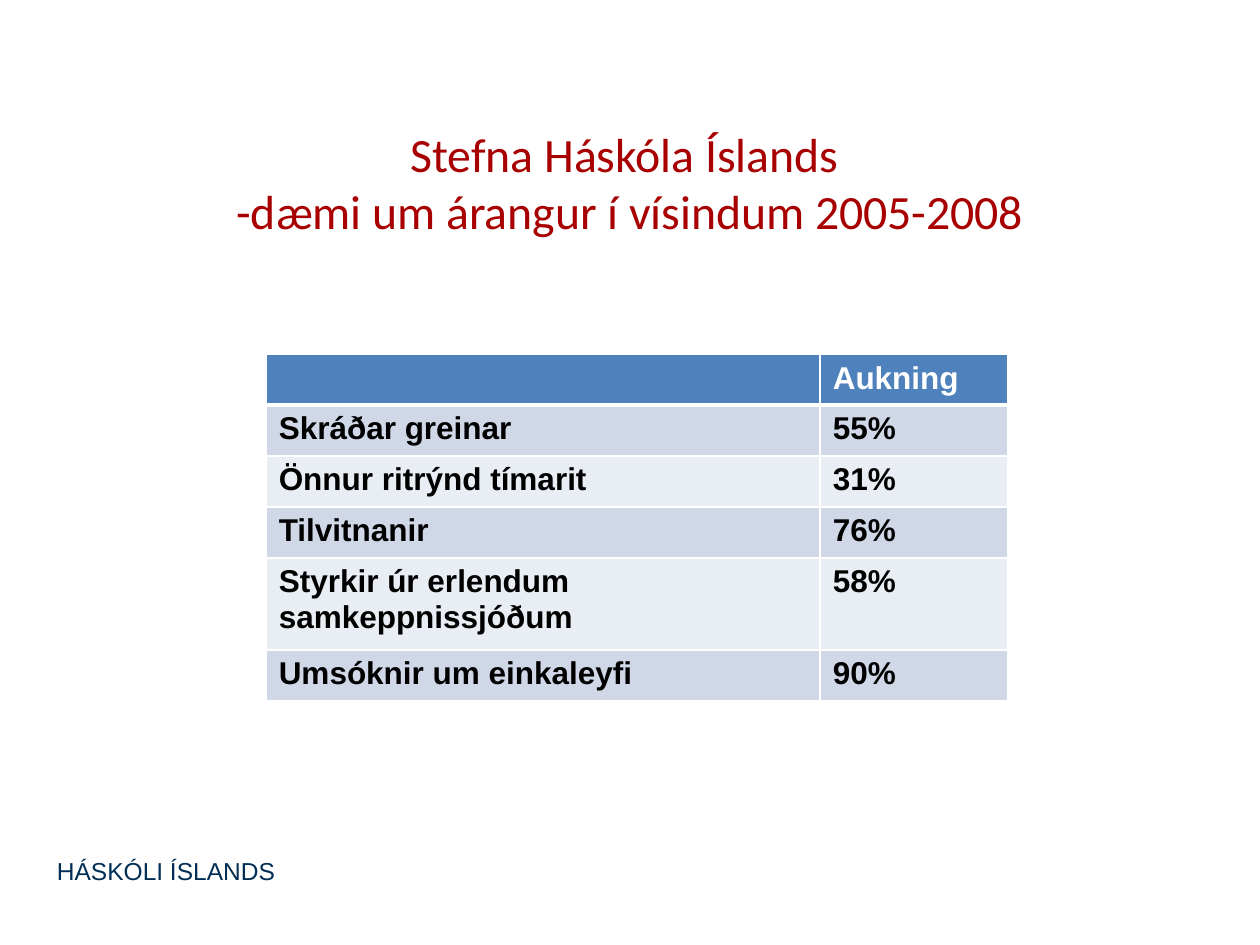
from lxml.etree import SubElement
from pptx import Presentation
from pptx.dml.color import RGBColor
from pptx.enum.text import MSO_ANCHOR, PP_ALIGN
from pptx.oxml.ns import qn
from pptx.util import Pt

WHITE = RGBColor(0xFF, 0xFF, 0xFF)
BLACK = RGBColor(0x00, 0x00, 0x00)
NAVY = RGBColor(0x00, 0x2E, 0x55)
RED = RGBColor(0xA8, 0x00, 0x00)
HEADER_BLUE = RGBColor(0x4F, 0x81, 0xBD)
BAND_DARK = RGBColor(0xD0, 0xD8, 0xE8)
BAND_LIGHT = RGBColor(0xE9, 0xED, 0xF4)


def add_span(para, text, font, size, color, bold=False):
    span = para.add_run()
    span.text = text
    span.font.name = font
    span.font.size = Pt(size)
    span.font.color.rgb = color
    span.font.bold = bold


def add_border(cell, side, width):
    line = SubElement(cell._tc.get_or_add_tcPr(), qn(f"a:{side}"), w=str(Pt(width)))
    fill = SubElement(line, qn("a:solidFill"))
    SubElement(fill, qn("a:srgbClr"), val=str(WHITE))


deck = Presentation()
deck.slide_width = Pt(720)
deck.slide_height = Pt(540)
page = deck.slides.add_slide(deck.slide_layouts[6])

footer = page.shapes.add_textbox(Pt(25.4), Pt(485.8), Pt(218), Pt(24))
footer.text_frame.word_wrap = True
add_span(footer.text_frame.paragraphs[0], "HÁSKÓLI ÍSLANDS", "Arial", 14, NAVY)

title = page.shapes.add_textbox(Pt(36), Pt(67.7), Pt(648), Pt(90))
title.text_frame.word_wrap = True
title.text_frame.vertical_anchor = MSO_ANCHOR.TOP
title.text_frame.margin_top = Pt(3.6)
para = title.text_frame.paragraphs[0]
para.alignment = PP_ALIGN.CENTER
add_span(para, "Stefna Háskóla Íslands ", "Calibri", 27.3, RED)
para.add_line_break()
add_span(para, "-dæmi um árangur í vísindum 2005-2008", "Calibri", 27.3, RED)

rows = [
    ("", "Aukning"),
    ("Skráðar greinar", "55%"),
    ("Önnur ritrýnd tímarit", "31%"),
    ("Tilvitnanir", "76%"),
    ("Styrkir úr erlendum samkeppnissjóðum", "58%"),
    ("Umsóknir um einkaleyfi", "90%"),
]
column_widths = [316.6, 107]
row_heights = [28.8, 29.2, 29.2, 29.2, 52.4, 29.2]
table = page.shapes.add_table(
    len(rows), len(column_widths), Pt(152.1), Pt(202.5),
    Pt(sum(column_widths)), Pt(sum(row_heights)),
).table
for column, width in zip(table.columns, column_widths):
    column.width = Pt(width)

for row_index, texts in enumerate(rows):
    table.rows[row_index].height = Pt(row_heights[row_index])
    is_header = row_index == 0
    band = BAND_DARK if row_index % 2 else BAND_LIGHT
    for column_index, text in enumerate(texts):
        cell = table.cell(row_index, column_index)
        add_border(cell, "lnL", 1)
        add_border(cell, "lnR", 1)
        add_border(cell, "lnT", 3 if row_index == 1 else 1)
        add_border(cell, "lnB", 3 if is_header else 1)
        cell.fill.solid()
        cell.fill.fore_color.rgb = HEADER_BLUE if is_header else band
        if text:
            color = WHITE if is_header else BLACK
            add_span(cell.text_frame.paragraphs[0], text, "Arial", 18, color, True)

deck.save("out.pptx")
